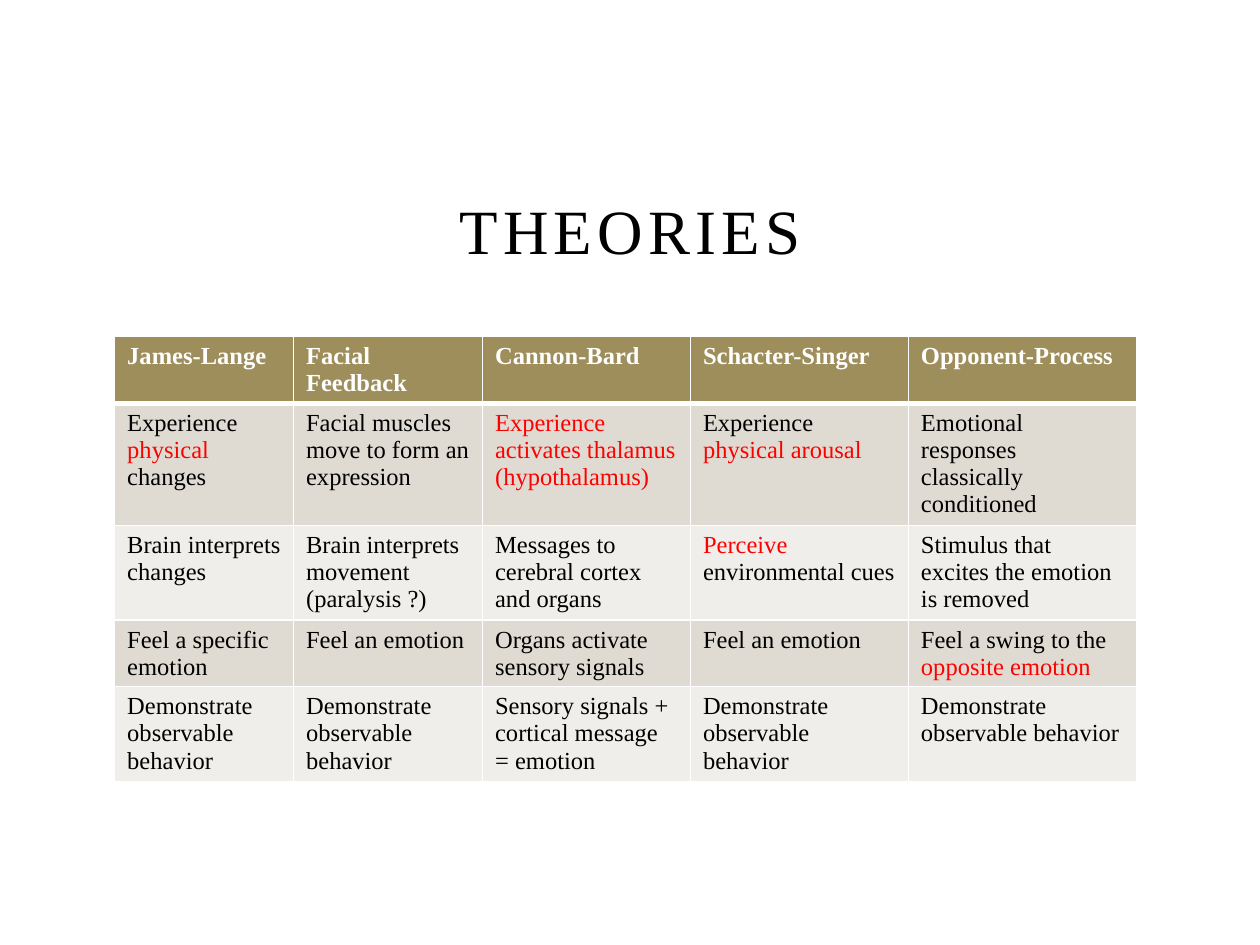
from pptx import Presentation
from pptx.dml.color import RGBColor
from pptx.enum.text import MSO_ANCHOR as Anchor, PP_ALIGN as Align
from pptx.oxml.ns import qn
from pptx.util import Inches, Pt
from lxml.etree import SubElement

THEORIES = [
    ["James-Lange", "Facial Feedback", "Cannon-Bard", "Schacter-Singer", "Opponent-Process"],
    ["Experience |physical |changes", "Facial muscles move to form an expression",
     "|Experience activates thalamus (hypothalamus)|", "Experience |physical arousal|",
     "Emotional responses classically conditioned"],
    ["Brain interprets changes", "Brain interprets movement (paralysis ?)",
     "Messages to cerebral cortex and organs", "|Perceive |environmental cues",
     "Stimulus that excites the emotion is removed"],
    ["Feel a specific emotion", "Feel an emotion", "Organs activate sensory signals",
     "Feel an emotion", "Feel a swing to the |opposite emotion|"],
    ["Demonstrate observable behavior", "Demonstrate observable behavior",
     "Sensory signals + cortical message = emotion", "Demonstrate observable behavior",
     "Demonstrate observable behavior"],
]
COLUMN_WIDTHS = [1.42, 1.5, 1.65, 1.73, 1.81]
ROW_HEIGHTS = [0.53, 0.97, 0.75, 0.53, 0.75]


def rgb(value):
    return RGBColor.from_string(value)


class ThemedSlide:
    """Holds the style and the current slide, and adds its elements."""

    face = "Times New Roman"
    ink, accent, white = "000000", "FF0000", "FFFFFF"
    header_fill, band_fills = "9E8E5C", ("F0EEEA", "DFDBD2")

    def __init__(self, deck):
        self.slide = deck.slides.add_slide(deck.slide_layouts[5])

    def style(self, run, size, color, bold=False):
        run.font.name, run.font.size, run.font.bold = self.face, Pt(size), bold
        run.font.color.rgb = rgb(color)

    def title(self, wording, left, top, width, height):
        heading = self.slide.shapes.title
        heading.left, heading.top = Inches(left), Inches(top)
        heading.width, heading.height = Inches(width), Inches(height)
        frame = heading.text_frame
        frame.text = wording
        frame.vertical_anchor = Anchor.BOTTOM
        frame.paragraphs[0].alignment = Align.CENTER
        run = frame.paragraphs[0].runs[0]
        self.style(run, 36, self.ink)
        run.font._element.set("spc", "300")

    def borders(self, cell, bottom, top):
        properties = cell._tc.get_or_add_tcPr()
        for side, points in (("L", 1), ("R", 1), ("T", top), ("B", bottom)):
            line = SubElement(properties, qn(f"a:ln{side}"), w=str(Pt(points)))
            fill = SubElement(line, qn("a:solidFill"))
            SubElement(fill, qn("a:srgbClr"), val=self.white)

    def cell(self, cell, wording, row):
        header = row == 0
        self.borders(cell, 3 if header else 1, 3 if row == 1 else 1)
        cell.fill.solid()
        cell.fill.fore_color.rgb = rgb(self.header_fill if header else self.band_fills[row % 2])
        paragraph = cell.text_frame.paragraphs[0]
        for index, part in enumerate(wording.split("|")):
            if part:
                run = paragraph.add_run()
                run.text = part
                plain = self.white if header else self.ink
                self.style(run, 14, self.accent if index % 2 else plain, header)

    def table(self, rows, widths, heights, left, top):
        grid = self.slide.shapes.add_table(
            len(rows), len(widths), Inches(left), Inches(top),
            Inches(sum(widths)), Inches(sum(heights))).table
        grid.horz_banding = False
        for column, width in zip(grid.columns, widths):
            column.width = Inches(width)
        for row, (wordings, height) in enumerate(zip(rows, heights)):
            grid.rows[row].height = Inches(height)
            for column, wording in enumerate(wordings):
                self.cell(grid.cell(row, column), wording, row)


def main():
    deck = Presentation()
    deck.slide_width, deck.slide_height = Inches(10), Inches(7.5)
    theories = ThemedSlide(deck)
    theories.title("THEORIES", 1.5, 1.42, 7, 0.75)
    theories.table(THEORIES, COLUMN_WIDTHS, ROW_HEIGHTS, 0.91, 2.67)
    deck.save("out.pptx")


if __name__ == "__main__":
    main()
